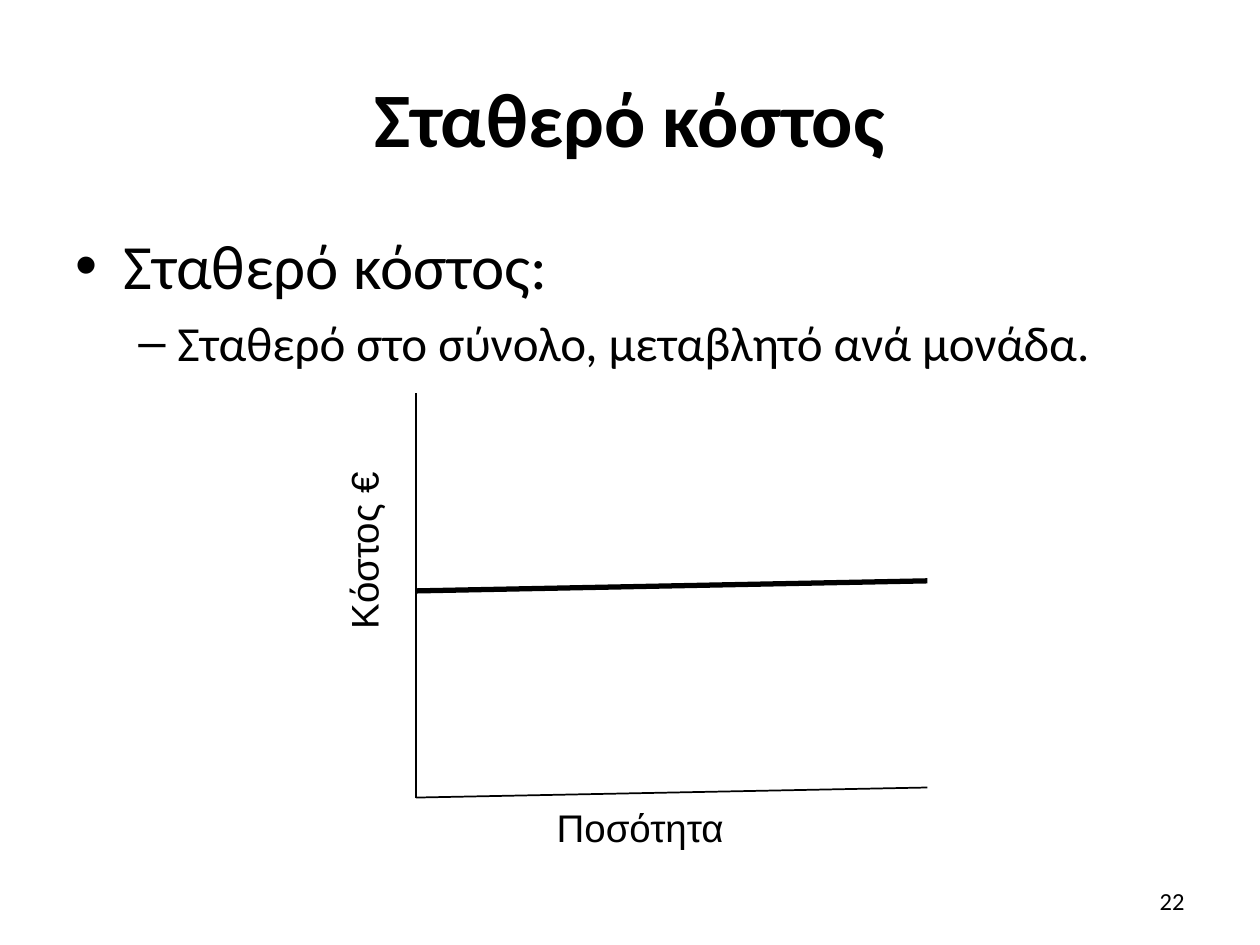
"""Build the fixed cost slide with a cost against quantity diagram."""
from dataclasses import dataclass

from lxml import etree
from pptx import Presentation
from pptx import util as u
from pptx.dml.color import RGBColor
from pptx.enum import shapes, text
from pptx.oxml.ns import qn


@dataclass(frozen=True)
class Theme:
    ink: RGBColor = RGBColor(0, 0, 0)
    main_font: str = "Calibri"
    label_font: str = "Arial"
    title_size: int = 44
    bullet_sizes: tuple = (36, 28)
    label_size: int = 22
    number_size: int = 14
    axis_width: int = 1
    curve_width: int = 3


class SlideBuilder:
    BULLETS = (("•", 0.38, -0.38), ("–", 0.81, -0.31))

    def __init__(self, slide, theme):
        self.slide = slide
        self.theme = theme

    def format_font(self, paragraph, size, name, bold=False):
        font = paragraph.font
        font.size = u.Pt(size)
        font.name = name
        font.bold = bold
        font.color.rgb = self.theme.ink

    def add_title(self, wording, left, top, width, height):
        title = self.slide.shapes.title
        title.left, title.top = u.Inches(left), u.Inches(top)
        title.width, title.height = u.Inches(width), u.Inches(height)
        title.text_frame.text = wording
        title.text_frame.vertical_anchor = text.MSO_ANCHOR.MIDDLE
        paragraph = title.text_frame.paragraphs[0]
        paragraph.alignment = text.PP_ALIGN.CENTER
        self.format_font(paragraph, self.theme.title_size, self.theme.main_font, bold=True)

    def add_frame(self, left, top, width, height, wrap=True):
        shape = self.slide.shapes.add_textbox(
            u.Inches(left), u.Inches(top), u.Inches(width), u.Inches(height))
        shape.text_frame.word_wrap = wrap
        return shape.text_frame

    def add_bullets(self, items, left, top, width, height):
        frame = self.add_frame(left, top, width, height)
        for index, (level, wording) in enumerate(items):
            paragraph = frame.add_paragraph() if index else frame.paragraphs[0]
            paragraph.text = wording
            paragraph.level = level
            size = self.theme.bullet_sizes[level]
            if index:
                paragraph.space_before = u.Pt(0.2 * size)
            character, margin, indent = self.BULLETS[level]
            properties = paragraph._p.get_or_add_pPr()
            properties.set("marL", str(u.Inches(margin)))
            properties.set("indent", str(u.Inches(indent)))
            etree.SubElement(properties, qn("a:buFont")).set("typeface", self.theme.label_font)
            etree.SubElement(properties, qn("a:buChar")).set("char", character)
            self.format_font(paragraph, size, self.theme.main_font)

    def add_label(self, wording, left, top, width, height, upward=False):
        frame = self.add_frame(left, top, width, height, wrap=upward)
        frame.text = wording
        paragraph = frame.paragraphs[0]
        if upward:
            frame._txBody.bodyPr.set("vert", "vert270")
            paragraph.alignment = text.PP_ALIGN.CENTER
        self.format_font(paragraph, self.theme.label_size, self.theme.label_font)

    def add_line(self, start, end, width):
        line = self.slide.shapes.add_connector(
            shapes.MSO_CONNECTOR.STRAIGHT, *map(u.Inches, start + end))
        line.line.color.rgb = self.theme.ink
        line.line.width = u.Pt(width)
        etree.SubElement(line._element.spPr, qn("a:effectLst"))

    def add_number(self, wording, left, top, width, height):
        frame = self.add_frame(left, top, width, height)
        frame.text = wording
        frame.vertical_anchor = text.MSO_ANCHOR.MIDDLE
        paragraph = frame.paragraphs[0]
        paragraph.alignment = text.PP_ALIGN.RIGHT
        self.format_font(paragraph, self.theme.number_size, self.theme.main_font)


def main():
    presentation = Presentation()
    presentation.slide_width = u.Inches(10)
    presentation.slide_height = u.Inches(7.5)
    theme = Theme()
    builder = SlideBuilder(
        presentation.slides.add_slide(presentation.slide_layouts[5]), theme)

    builder.add_title("Σταθερό κόστος", 0.5, 0.3, 9, 1.25)
    builder.add_bullets(
        [(0, "Σταθερό κόστος:"), (1, "Σταθερό στο σύνολο, μεταβλητό ανά μονάδα.")],
        0.5, 1.75, 9, 4.95)

    left, right, top, bottom = 3.3, 7.36, 3.12, 6.33
    cost, rise = 4.69, 0.08
    builder.add_line((left, bottom), (right, bottom - rise), theme.axis_width)
    builder.add_line((left, top), (left, bottom), theme.axis_width)
    builder.add_label("Κόστος €", 2.65, top, 0.57, 2.5, upward=True)
    builder.add_label("Ποσότητα", 4.32, bottom, 1.63, 0.47)
    builder.add_line((left, cost), (right, cost - rise), theme.curve_width)
    builder.add_number("22", 7.17, 6.95, 2.33, 0.4)

    presentation.save("out.pptx")


if __name__ == "__main__":
    main()
